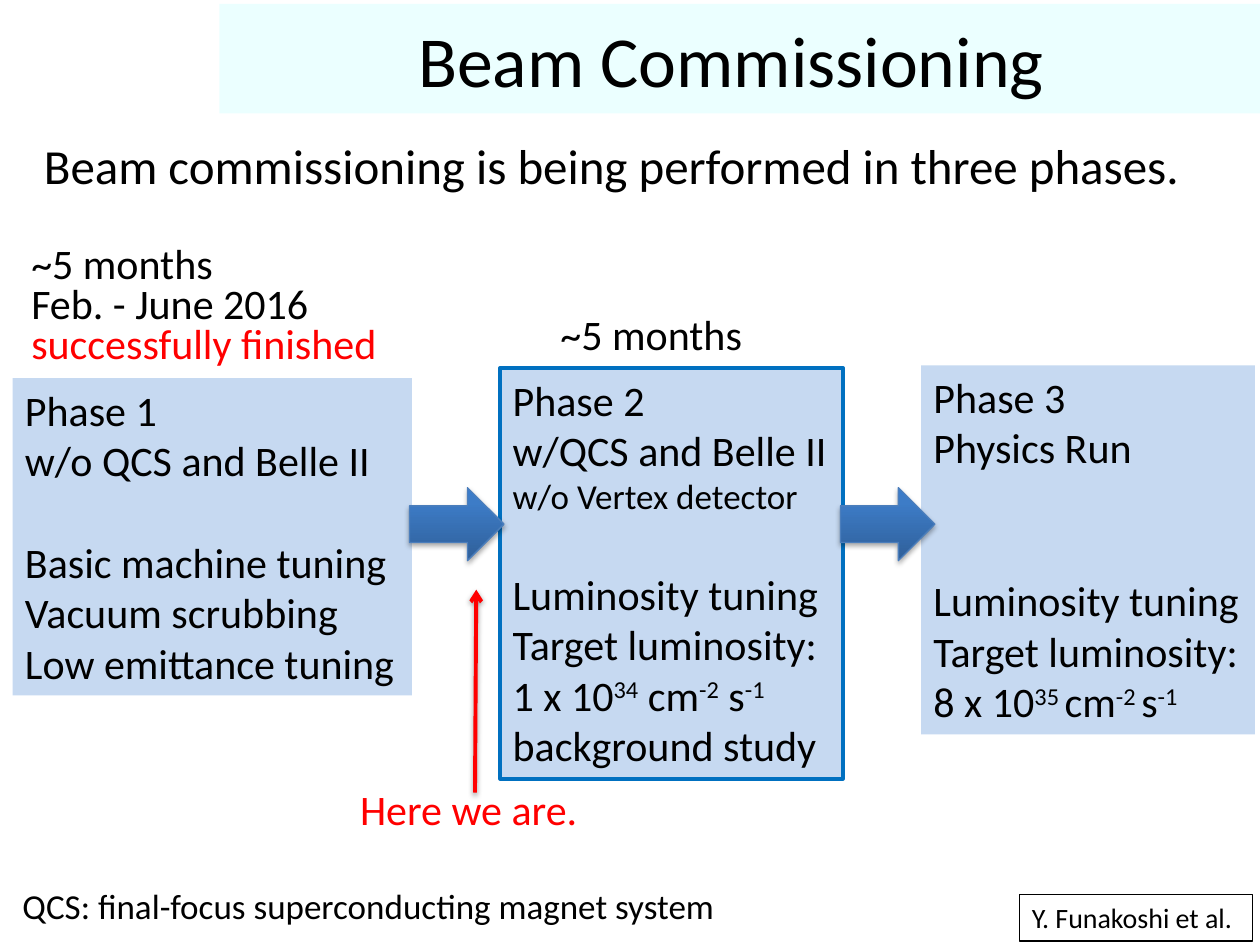
from lxml import etree
from pptx import Presentation
from pptx.dml.color import RGBColor
from pptx.enum.shapes import MSO_CONNECTOR, MSO_SHAPE
from pptx.enum.text import MSO_ANCHOR, MSO_AUTO_SIZE, PP_ALIGN
from pptx.oxml import parse_xml
from pptx.oxml.ns import qn
from pptx.util import Inches, Pt

RECTANGLE, RIGHT_ARROW = MSO_SHAPE.RECTANGLE, MSO_SHAPE.RIGHT_ARROW
STRAIGHT = MSO_CONNECTOR.STRAIGHT
TOP, MIDDLE = MSO_ANCHOR.TOP, MSO_ANCHOR.MIDDLE
LEFT, CENTER = PP_ALIGN.LEFT, PP_ALIGN.CENTER
FIXED, GROW = MSO_AUTO_SIZE.NONE, MSO_AUTO_SIZE.SHAPE_TO_FIT_TEXT
NAMESPACE = "http://schemas.openxmlformats.org/drawingml/2006/main"
BLANK_LINE = 29.3  # height in points of one line of 24 point text


def color(value):
    return RGBColor.from_string(value)


class SlideBuilder:
    font = "Calibri"
    black, red, pale_blue, blue = "000000", "FF0000", "C6D9F1", "0070C0"

    def __init__(self, slide):
        self.slide = slide

    def format_runs(self, paragraph, size, text_color):
        for run in paragraph.runs:
            run.font.name = self.font
            run.font.size = Pt(size)
            run.font.color.rgb = color(text_color)

    def set_lines(self, shape, lines, size):
        """Each line is a text or (text, options); ^ marks start and end of superscript."""
        frame = shape.text_frame
        frame.word_wrap = False
        frame.auto_size = GROW
        frame.vertical_anchor = TOP
        for index, line in enumerate(lines):
            text, options = line if isinstance(line, tuple) else (line, {})
            paragraph = frame.add_paragraph() if index else frame.paragraphs[0]
            paragraph.alignment = LEFT
            if "before" in options:
                paragraph.space_before = Pt(options["before"])
            if "spacing" in options:
                paragraph.line_spacing = options["spacing"]
            for row, part in enumerate(text.split("\n")):
                if row:
                    paragraph.add_line_break()
                for position, piece in enumerate(part.split("^")):
                    if piece:
                        run = paragraph.add_run()
                        run.text = piece
                        if position % 2:
                            run.font._element.set("baseline", "30000")
            self.format_runs(paragraph, options.get("size", size),
                             options.get("color", self.black))

    def title(self, text, left, top, width, height):
        shape = self.slide.shapes.title
        shape.left, shape.top = Inches(left), Inches(top)
        shape.width, shape.height = Inches(width), Inches(height)
        shape.fill.solid()
        shape.fill.fore_color.rgb = color("00FFFF")
        fill_color = shape._element.spPr.find(".//" + qn("a:srgbClr"))
        etree.SubElement(fill_color, qn("a:alpha"), val="8000")
        frame = shape.text_frame
        frame.text = text
        frame.auto_size = FIXED
        frame.vertical_anchor = MIDDLE
        frame.paragraphs[0].alignment = CENTER
        self.format_runs(frame.paragraphs[0], 41, self.black)

    def text(self, lines, left, top, width, height, size=24):
        box = self.slide.shapes.add_textbox(
            Inches(left), Inches(top), Inches(width), Inches(height))
        self.set_lines(box, lines, size)

    def box(self, lines, left, top, width, height, size=24,
            fill=None, line=None, line_width=0.75):
        shape = self.slide.shapes.add_shape(
            RECTANGLE, Inches(left), Inches(top), Inches(width), Inches(height))
        shape.shadow.inherit = False
        if fill:
            shape.fill.solid()
            shape.fill.fore_color.rgb = color(fill)
        else:
            shape.fill.background()
        if line:
            shape.line.color.rgb = color(line)
            shape.line.width = Pt(line_width)
        else:
            shape.line.fill.background()
        self.set_lines(shape, lines, size)

    def add_shadow(self, properties, alpha, distance):
        effects = properties.find(qn("a:effectLst"))
        if effects is None:
            effects = etree.SubElement(properties, qn("a:effectLst"))
        shadow = etree.SubElement(
            effects, qn("a:outerShdw"), blurRad=str(Pt(3.1)), dist=str(Pt(distance)),
            dir="5400000", rotWithShape="0")
        shade = etree.SubElement(shadow, qn("a:srgbClr"), val=self.black)
        etree.SubElement(shade, qn("a:alpha"), val=str(alpha * 1000))

    def block_arrow(self, left, top, width, height):
        shape = self.slide.shapes.add_shape(
            RIGHT_ARROW, Inches(left), Inches(top), Inches(width), Inches(height))
        shape.shadow.inherit = False
        shape.line.color.rgb = color("4B7EBC")
        shape.line.width = Pt(0.75)
        stops = "".join(
            f'<a:gs pos="{place * 1000}"><a:srgbClr val="{shade}"/></a:gs>'
            for place, shade in ((0, "2F5F99"), (80, "3D7CC7"), (100, "3A7CCB")))
        gradient = parse_xml(
            f'<a:gradFill xmlns:a="{NAMESPACE}" rotWithShape="1"><a:gsLst>{stops}</a:gsLst>'
            '<a:lin ang="16200000" scaled="0"/></a:gradFill>')
        properties = shape._element.spPr
        properties.find(qn("a:prstGeom")).addnext(gradient)
        self.add_shadow(properties, 35, 1.8)

    def pointer(self, tip_x, tip_y, end_x, end_y):
        connector = self.slide.shapes.add_connector(
            STRAIGHT, Inches(tip_x), Inches(tip_y), Inches(end_x), Inches(end_y))
        connector.line.color.rgb = color(self.red)
        connector.line.width = Pt(2.25)
        properties = connector._element.spPr
        etree.SubElement(properties.find(qn("a:ln")), qn("a:headEnd"), type="arrow")
        self.add_shadow(properties, 38, 1.6)


def main():
    presentation = Presentation()
    presentation.slide_width, presentation.slide_height = Inches(10), Inches(7.5)
    builder = SlideBuilder(presentation.slides.add_slide(presentation.slide_layouts[5]))

    # Heading and introduction
    builder.title("Beam Commissioning ", 1.74, 0.03, 8.26, 0.87)
    builder.text(["Beam commissioning is being performed in three phases."],
                 0.25, 1.03, 9.51, 0.57, size=28)

    # Three phases
    builder.box(["Phase 1", "w/o QCS and Belle II",
                 ("Basic machine tuning", {"before": BLANK_LINE}),
                 "Vacuum scrubbing", "Low emittance tuning"],
                0.1, 3, 3.17, 2.52, fill=builder.pale_blue)
    builder.box(["Phase 2", "w/QCS and Belle II", ("w/o Vertex detector", {"size": 20}),
                 ("Luminosity tuning", {"before": BLANK_LINE}),
                 "Target luminosity:\n1 x 10^34^ cm^-2^ s^-1^", "background study"],
                3.97, 2.92, 2.72, 3.26, fill=builder.pale_blue,
                line=builder.blue, line_width=2.25)
    builder.box(["Phase 3", "Physics Run",
                 ("Luminosity tuning", {"before": 2 * BLANK_LINE}),
                 "Target luminosity:\n8 x 10^35 ^cm^-2 ^s^-1^"],
                7.31, 2.9, 2.65, 2.93, fill=builder.pale_blue)

    # Arrows between the phases
    for left in (3.25, 6.67):
        builder.block_arrow(left, 3.87, 0.75, 0.58)

    # Durations
    tight = {"spacing": 0.8}
    builder.text([("~5 months", tight), ("Feb. - June 2016", tight),
                  ("successfully finished", {**tight, "color": builder.red})],
                 0.15, 1.91, 2.97, 1.07)
    builder.text(["~5 months"], 4.35, 2.4, 1.66, 0.5)

    # Current position
    builder.pointer(3.78, 4.68, 3.77, 6.29)
    builder.text([("Here we are.", {"color": builder.red})], 2.76, 6.17, 1.94, 0.5)

    # Footnote and credit
    builder.text(["QCS: final-focus superconducting magnet system"],
                 0.08, 6.97, 5.75, 0.44, size=20)
    builder.box(["Y. Funakoshi et al."], 8.09, 7.1, 1.85, 0.37, size=16, line=builder.black)

    presentation.save("out.pptx")


if __name__ == "__main__":
    main()
